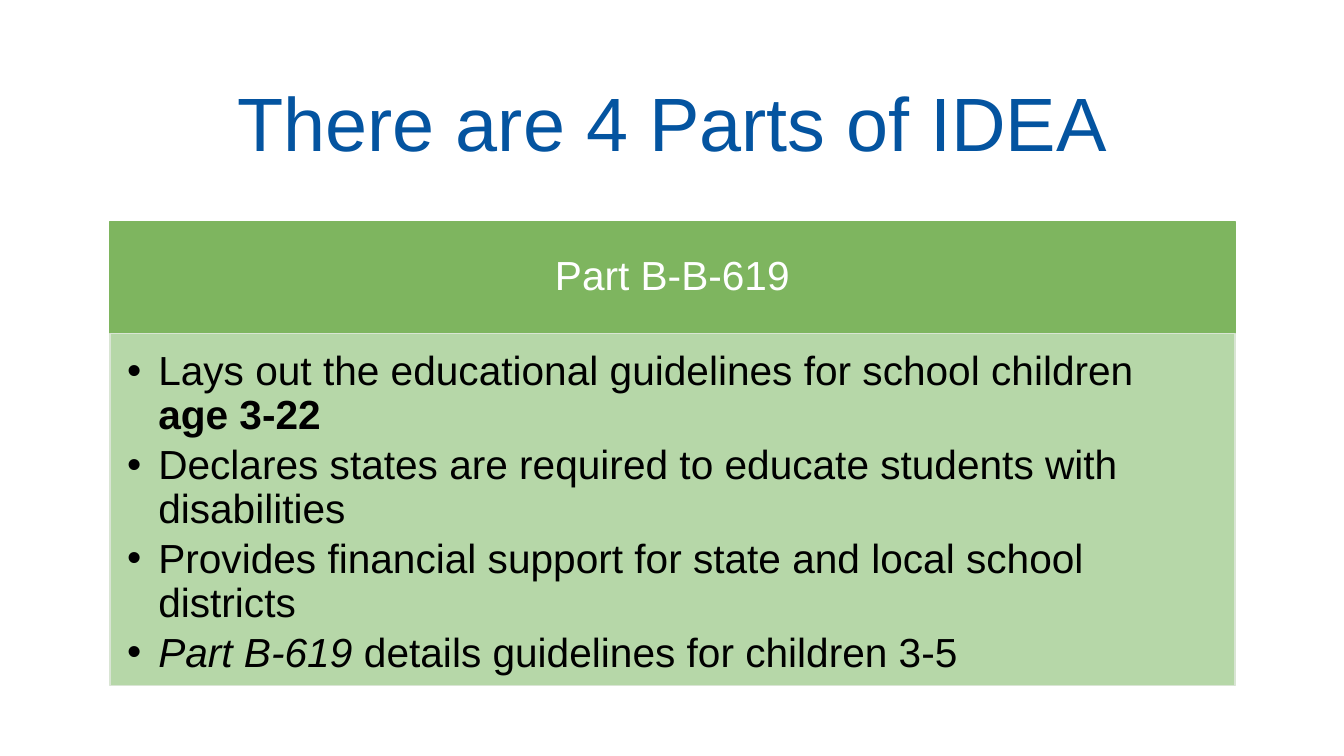
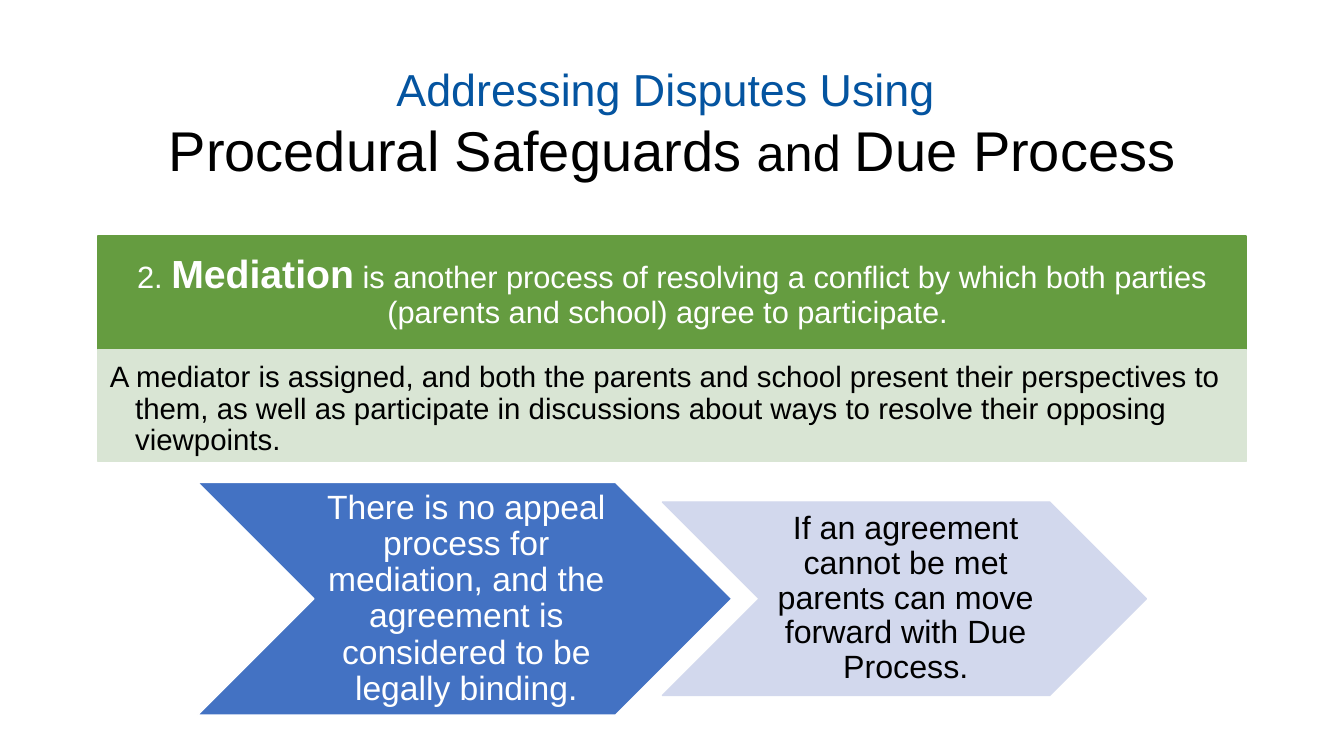
from dataclasses import dataclass

from lxml import etree
from pptx import Presentation
from pptx.dml.color import RGBColor
from pptx.enum.shapes import MSO_SHAPE
from pptx.enum.text import MSO_ANCHOR, MSO_AUTO_SIZE, PP_ALIGN
from pptx.oxml.ns import qn
from pptx.util import Inches, Pt

RECT, CHEVRON = MSO_SHAPE.RECTANGLE, MSO_SHAPE.CHEVRON
TOP, MIDDLE = MSO_ANCHOR.TOP, MSO_ANCHOR.MIDDLE
LEFT, CENTER = PP_ALIGN.LEFT, PP_ALIGN.CENTER
FIT_NONE = MSO_AUTO_SIZE.NONE
TITLE_ONLY = 5


@dataclass(frozen=True)
class Theme:
    font: str = "Arial"
    title: str = "0454A0"
    black: str = "000000"
    white: str = "FFFFFF"
    light_green: str = "7EB55F"
    pale_green: str = "B6D7A8"
    green: str = "659C40"
    mist_green: str = "D9E5D4"
    blue: str = "4372C3"
    pale_blue: str = "D2D8ED"
    title_size: int = 54
    kicker_size: int = 32
    subtitle_size: int = 40
    joiner_size: int = 36
    part_size: int = 29
    term_size: int = 28
    lead_size: int = 22
    detail_size: int = 21
    outcome_size: int = 24
    option_size: int = 23
    spacing: float = 0.9
    bullet_gap: float = 4.3


T = Theme()


def run(text, size, color, bold=False, italic=False):
    return text, size, color, bold, italic


def part(text, **style):
    return run(text, T.part_size, T.black, **style)


PARTS_TITLE = [[run("There are 4 Parts of IDEA", T.title_size, T.title)]]
PARTS_HEAD = [[run("Part B-B-619", T.part_size, T.white)]]
PARTS_BODY = [
    [part("Lays out the educational guidelines for school children "), part("age 3-22", bold=True)],
    [part("Declares states are required to educate students with disabilities")],
    [part("Provides financial support for state and local school districts")],
    [part("Part B-619 ", italic=True), part("details guidelines for children 3-5")],
]

DISPUTES_TITLE = [
    [run("Addressing Disputes Using ", T.kicker_size, T.title)],
    [
        run("Procedural Safeguards ", T.subtitle_size, T.black),
        run("and ", T.joiner_size, T.black),
        run("Due Process", T.subtitle_size, T.black),
    ],
]
MEDIATION_HEAD = [[
    run("2. ", T.lead_size, T.white),
    run("Mediation", T.term_size, T.white, bold=True),
    run(" is another process of resolving a conflict by which both parties "
        "(parents and school) agree to participate. ", T.lead_size, T.white),
]]
MEDIATION_BODY = [[run(
    "A mediator is assigned, and both the parents and school present their perspectives to them, "
    "as well as participate in discussions about ways to resolve their opposing viewpoints.",
    T.detail_size, T.black)]]
STEPS = [
    ([[run("There is no appeal process for mediation, and the agreement is considered "
           "to be legally binding.", T.outcome_size, T.white)]], T.blue, T.white, 1.96, 5.3, 2.31),
    ([[run("If an agreement cannot be met parents can move forward with Due Process.",
           T.option_size, T.black)]], T.pale_blue, T.pale_blue, 6.57, 4.8, 1.92),
]
STEPS_MIDDLE = 5.94


def write(tf, paragraphs, insets, anchor=MIDDLE, align=CENTER, spacing=T.spacing,
          hang=0, bullet=None, gap=0):
    tf.word_wrap = True
    tf.auto_size = FIT_NONE
    tf.vertical_anchor = anchor
    tf.margin_left, tf.margin_top, tf.margin_right, tf.margin_bottom = map(Inches, insets)
    for i, runs in enumerate(paragraphs):
        p = tf.paragraphs[0] if i == 0 else tf.add_paragraph()
        p.alignment = align
        p.line_spacing = spacing
        p.space_before = Pt(gap if i else 0)
        pPr = p._p.get_or_add_pPr()
        if hang:
            pPr.set("marL", str(Inches(hang)))
            pPr.set("indent", str(-Inches(hang)))
        if bullet:
            etree.SubElement(pPr, qn("a:buFont")).set("typeface", T.font)
            etree.SubElement(pPr, qn("a:buChar")).set("char", bullet)
        for text, size, color, bold, italic in runs:
            r = p.add_run()
            r.text = text
            r.font.name = T.font
            r.font.size = Pt(size)
            r.font.bold = bold
            r.font.italic = italic
            r.font.color.rgb = RGBColor.from_string(color)


def add_titled_slide(prs, paragraphs, box):
    s = prs.slides.add_slide(prs.slide_layouts[TITLE_ONLY])
    title = s.shapes.title
    title.left, title.top, title.width, title.height = map(Inches, box)
    write(title.text_frame, paragraphs, (0.1, 0.05, 0.1, 0.05), anchor=TOP, spacing=1.0)
    return s


def add_block(s, kind, box, fill, line, paragraphs, insets, **style):
    sp = s.shapes.add_shape(kind, *map(Inches, box))
    sp.shadow.inherit = False
    sp.fill.solid()
    sp.fill.fore_color.rgb = RGBColor.from_string(fill)
    sp.line.color.rgb = RGBColor.from_string(line)
    sp.line.width = Pt(1)
    write(sp.text_frame, paragraphs, insets, **style)
    return sp


def add_panel(s, left, top, width, head, body):
    for height, fill, line, paragraphs, insets, style in (head, body):
        add_block(s, RECT, (left, top, width, height), fill, line, paragraphs, insets, **style)
        top += height


def build_parts(prs):
    s = add_titled_slide(prs, PARTS_TITLE, (1.87, 0.7, 9.6, 1.01))
    add_panel(
        s, 1.09, 2.2, 11.16,
        (1.11, T.light_green, T.light_green, PARTS_HEAD, (0.23, 0.13, 0.23, 0.13), {}),
        (3.49, T.pale_green, T.mist_green, PARTS_BODY, (0.17, 0.17, 0.23, 0.25),
         dict(anchor=TOP, align=LEFT, hang=0.31, bullet="•", gap=T.bullet_gap)),
    )


def build_disputes(prs):
    s = add_titled_slide(prs, DISPUTES_TITLE, (1.33, 0.56, 10.67, 1.31))
    add_panel(
        s, 0.97, 2.34, 11.39,
        (1.13, T.green, T.green, MEDIATION_HEAD, (0.17, 0.1, 0.17, 0.1), {}),
        (1.11, T.mist_green, T.mist_green, MEDIATION_BODY, (0.12, 0.12, 0.16, 0.18),
         dict(anchor=TOP, align=LEFT, hang=0.25)),
    )
    for paragraphs, fill, line, left, width, height in STEPS:
        box = (left, STEPS_MIDDLE - height / 2, width, height)
        add_block(s, CHEVRON, box, fill, line, paragraphs, (0.03, 0.02, 0, 0.02))


def main():
    prs = Presentation()
    prs.slide_width, prs.slide_height = Inches(13.33), Inches(7.5)
    build_parts(prs)
    build_disputes(prs)
    prs.save("out.pptx")


if __name__ == "__main__":
    main()
